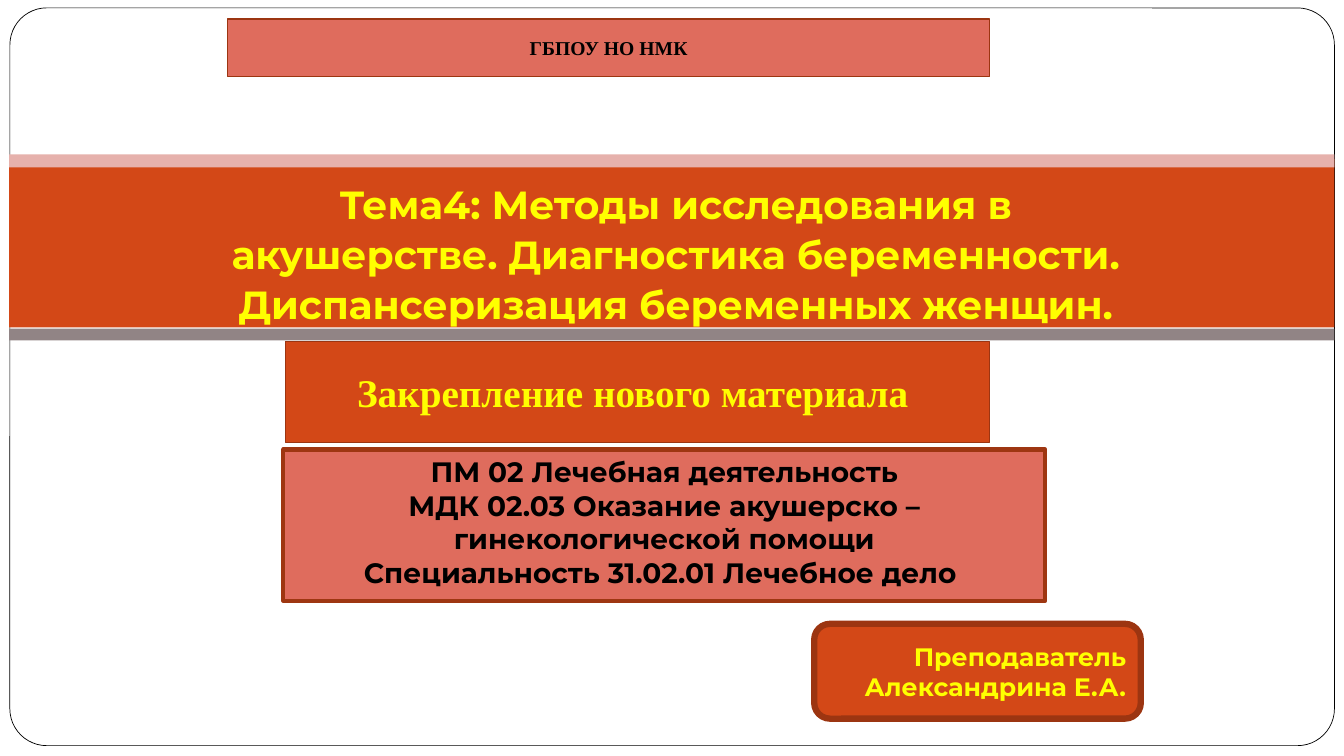
import pptx
import pptx.util
import pptx.dml.color
import pptx.enum.shapes
import pptx.enum.text

Cm = pptx.util.Cm
Pt = pptx.util.Pt
KIND = pptx.enum.shapes.MSO_SHAPE
ALIGN = pptx.enum.text.PP_ALIGN
ANCHOR = pptx.enum.text.MSO_ANCHOR

SANS, SERIF = "Montserrat", "Times New Roman"
ORANGE, CORAL, RUST = "D34817", "DF6C5D", "9C3511"
YELLOW, BLACK = "FFFF00", "000000"

FRAME = (0.25, 0.2, 33.38, 18.59)
BANDS = [
    (4.01, 4.24, ORANGE),
    (3.89, 0.33, "E6B1AC"),
    (8.28, 0.3, "918485"),
]
TITLE = ("Тема4: Методы исследования в акушерстве. Диагностика беременности. "
         "Диспансеризация беременных женщин.")
TITLE_BOX = (5.13, 3.73, 23.8, 5.38)
CARDS = [
    (KIND.RECTANGLE, (7.14, 11.33, 19.2, 3.81), CORAL, "9E3611", 3,
     "ПМ 02 Лечебная деятельность\vМДК 02.03 Оказание акушерско – "
     "гинекологической помощи\vСпециальность 31.02.01 Лечебное дело ",
     SANS, 20, BLACK, ALIGN.CENTER, ANCHOR.TOP),
    (KIND.RECTANGLE, (5.74, 0.48, 19.2, 1.45), CORAL, RUST, 1,
     "ГБПОУ НО НМК", SERIF, 14, BLACK, ALIGN.CENTER, ANCHOR.MIDDLE),
    (KIND.ROUNDED_RECTANGLE, (20.52, 15.72, 8.23, 2.39), ORANGE, RUST, 4.5,
     "Преподаватель Александрина Е.А.", SANS, 18, YELLOW, ALIGN.RIGHT,
     ANCHOR.MIDDLE),
    (KIND.RECTANGLE, (7.19, 8.61, 17.75, 2.54), ORANGE, RUST, 1,
     "Закрепление нового материала ", SERIF, 28, YELLOW, ALIGN.CENTER,
     ANCHOR.MIDDLE),
]


def tint(code):
    return pptx.dml.color.RGBColor.from_string(code)


def draw(kind, box, fill, edge=None, width=0):
    shape = slide.shapes.add_shape(kind, *map(Cm, box))
    shape.shadow.inherit = False
    shape.fill.solid()
    shape.fill.fore_color.rgb = tint(fill)
    if edge:
        shape.line.color.rgb = tint(edge)
        shape.line.width = Pt(width)
    else:
        shape.line.fill.background()
    return shape


def write(shape, text, font, size, color, align, anchor):
    frame = shape.text_frame
    frame.text = text
    frame.word_wrap = True
    frame.auto_size = pptx.enum.text.MSO_AUTO_SIZE.NONE
    frame.vertical_anchor = anchor
    for para in frame.paragraphs:
        para.alignment = align
        for run in para.runs:
            run.font.name = font
            run.font.size = Pt(size)
            run.font.bold = True
            run.font.color.rgb = tint(color)


deck = pptx.Presentation()
deck.slide_width, deck.slide_height = Cm(33.87), Cm(19.05)
slide = deck.slides.add_slide(deck.slide_layouts[5])

frame = draw(KIND.ROUNDED_RECTANGLE, FRAME, "FFFFFF", BLACK, 0.5)
frame.adjustments[0] = 0.05
for top, height, fill in BANDS:
    draw(KIND.RECTANGLE, (0.23, top, 33.4, height), fill)

title = slide.shapes.title
title.left, title.top, title.width, title.height = map(Cm, TITLE_BOX)
write(title, TITLE, SANS, 28, YELLOW, ALIGN.CENTER, ANCHOR.MIDDLE)
title.text_frame.margin_bottom = Cm(0.25)
head = title.text_frame.paragraphs[0]
head.line_spacing = 1.06
head.space_after = Pt(8)
slide.shapes.element.append(title.element)

for kind, box, fill, edge, width, *text in CARDS:
    write(draw(kind, box, fill, edge, width), *text)

deck.save("out.pptx")
